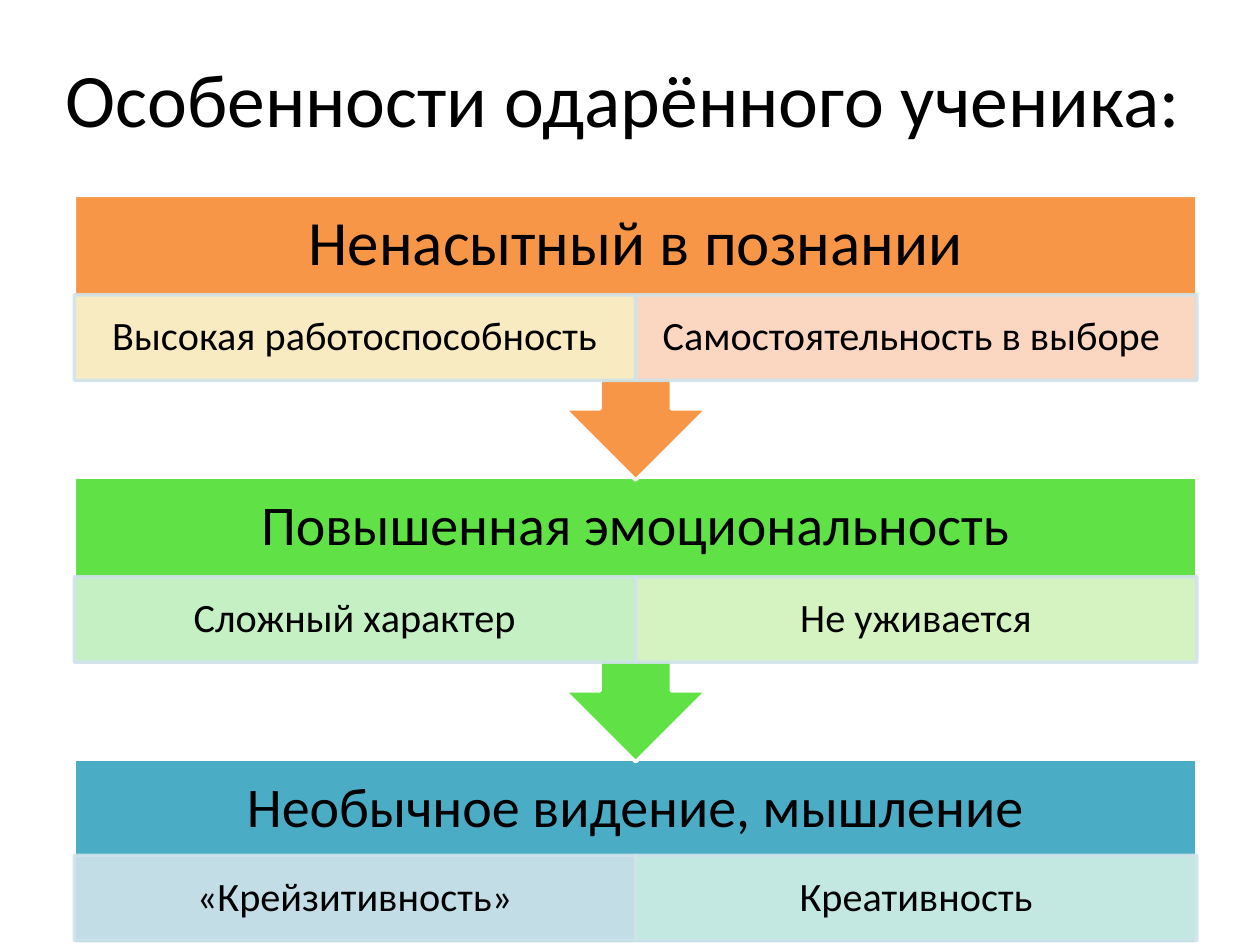
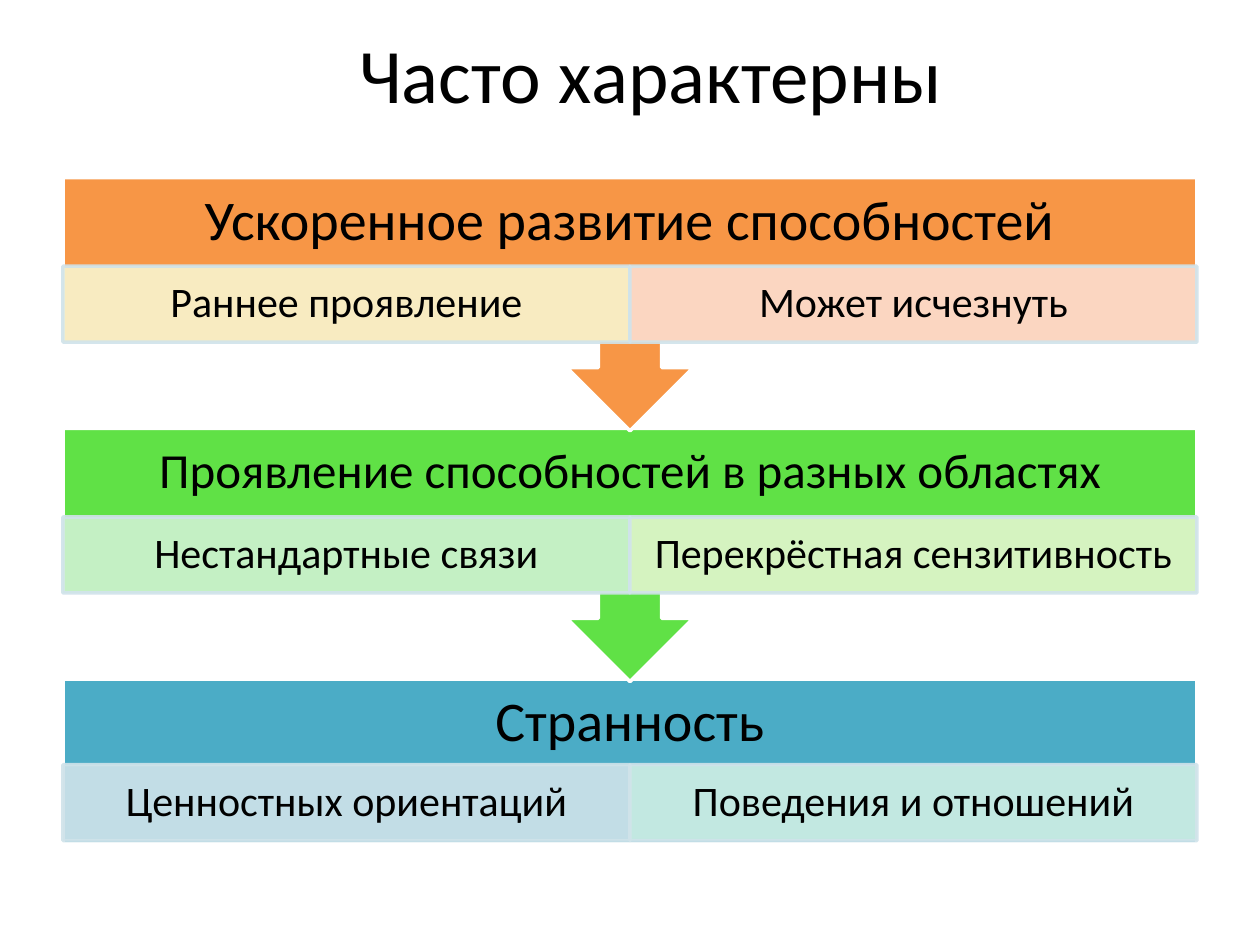
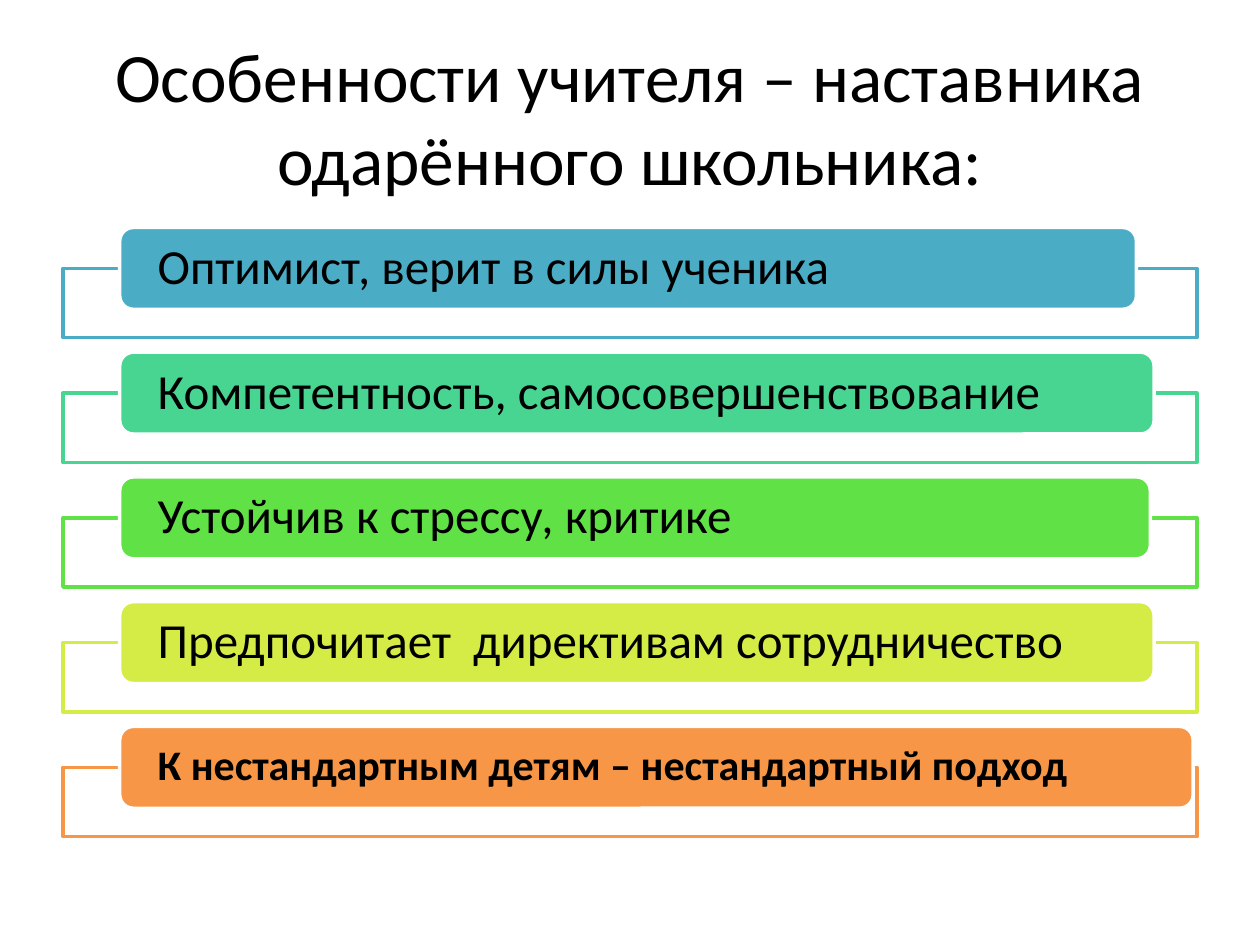
from typing import Any, NamedTuple

from lxml.etree import SubElement
from pptx import Presentation
from pptx.dml.color import RGBColor
from pptx.enum.shapes import MSO_SHAPE
from pptx.enum.text import MSO_ANCHOR, PP_ALIGN
from pptx.oxml.ns import qn
from pptx.util import Emu, Inches, Pt

WIDE, HIGH = Inches(10), Inches(7.5)
COLS, ROWS = 1000, 750

BLACK = RGBColor(0x00, 0x00, 0x00)
WHITE = RGBColor(0xFF, 0xFF, 0xFF)
ORANGE = RGBColor(0xF7, 0x96, 0x46)
GREEN = RGBColor(0x60, 0xE1, 0x46)
BLUE = RGBColor(0x4B, 0xAC, 0xC6)
MINT = RGBColor(0x48, 0xD4, 0x91)
LIME = RGBColor(0xD5, 0xEC, 0x46)
ICE = RGBColor(0xD0, 0xE3, 0xEA)
AQUA = RGBColor(0xCF, 0xEF, 0xE5)
LEAF = RGBColor(0xCF, 0xF2, 0xD2)
PEAR = RGBColor(0xE2, 0xF6, 0xCE)
CREAM = RGBColor(0xF9, 0xF5, 0xCF)
PEACH = RGBColor(0xFC, 0xDD, 0xCF)

FONT = {"name": "Calibri", "bold": False}
FRAME = {"word_wrap": True, "vertical_anchor": MSO_ANCHOR.MIDDLE}
TINTS = [(ORANGE, CREAM, PEACH), (GREEN, LEAF, PEAR), (BLUE, ICE, AQUA)]


class Box(NamedTuple):
    left: float
    top: float
    wide: float
    high: float

    def place(self) -> list[Emu]:
        x, y = WIDE / COLS, HIGH / ROWS
        return [Emu(round(n * s)) for n, s in zip(self, (x, y, x, y))]


class Tier(NamedTuple):
    head: str
    size: float
    cells: tuple[str, str]


class Stack(NamedTuple):
    title: str
    size: float
    spot: Box
    left: float
    top: float
    wide: float
    high: float
    small: float
    tiers: list[Tier]


class Bar(NamedTuple):
    text: str
    tint: RGBColor
    wide: float
    size: float = 28
    bold: bool = False


STACKS = [
    Stack("Особенности одарённого ученика:", 43.2, Box(39, 0, 911, 155),
          59, 155, 891, 226, 23, [
              Tier("Ненасытный в познании", 36,
                   ("Высокая работоспособность", "Самостоятельность в выборе ")),
              Tier("Повышенная эмоциональность", 32,
                   ("Сложный характер", "Не уживается")),
              Tier("Необычное видение, мышление", 32,
                   ("«Крейзитивность»", "Креативность")),
          ]),
    Stack("Часто характерны", 44, Box(83, 0, 867, 115),
          50, 141, 900, 201, 24, [
              Tier("Ускоренное развитие способностей", 32,
                   ("Раннее проявление", "Может исчезнуть")),
              Tier("Проявление способностей в разных областях", 28,
                   ("Нестандартные связи", "Перекрёстная сензитивность")),
              Tier("Странность", 32,
                   ("Ценностных ориентаций", "Поведения и отношений")),
          ]),
]

BARS = [
    Bar("Оптимист, верит в силы ученика", BLUE, 807),
    Bar("Компетентность, самосовершенствование", MINT, 821),
    Bar("Устойчив к стрессу, критике", GREEN, 818),
    Bar("Предпочитает  директивам сотрудничество", LIME, 821),
    Bar("К нестандартным детям – нестандартный подход", ORANGE, 852, 24, True),
]


def adorn(thing: Any, looks: dict[str, Any]) -> None:
    for key, val in looks.items():
        setattr(thing, key, val)


def write(shape: Any, text: str, size: float, side: float = 0.1,
          gap: float = 0.9, align: PP_ALIGN = PP_ALIGN.CENTER,
          bold: bool = False) -> None:
    frame = shape.text_frame
    adorn(frame, FRAME | {"margin_left": Inches(side), "margin_right": Inches(side),
                          "margin_top": Inches(0.03), "margin_bottom": Inches(0.03)})
    para = frame.paragraphs[0]
    adorn(para, {"text": text, "alignment": align, "line_spacing": gap})
    font = para.runs[0].font
    adorn(font, FONT | {"size": Pt(size), "bold": bold})
    font.color.rgb = BLACK


def label(slide: Any, box: Box, text: str, size: float, **looks: Any) -> None:
    write(slide.shapes.add_textbox(*box.place()), text, size, **looks)


def draw(slide: Any, kind: MSO_SHAPE, box: Box, fill: RGBColor,
         edge: RGBColor = WHITE) -> Any:
    shape = slide.shapes.add_shape(kind, *box.place())
    shape.shadow.inherit = False
    shape.fill.solid()
    shape.fill.fore_color.rgb = fill
    shape.line.color.rgb = edge
    shape.line.width = Pt(2)
    return shape


def fade(shape: Any) -> None:
    for tone in list(shape.element.iter(qn("a:srgbClr")))[:2]:
        SubElement(tone, qn("a:alpha"), val="90000")


def add_tier(slide: Any, stack: Stack, row: int) -> None:
    tier, (tint, *pales) = stack.tiers[row], TINTS[row]
    last = row == len(stack.tiers) - 1
    top = stack.top + row * 0.99 * stack.high
    full = Box(stack.left, top, stack.wide, stack.high * (0.65 if last else 1))
    kind = MSO_SHAPE.RECTANGLE if last else MSO_SHAPE.UP_ARROW_CALLOUT
    block = draw(slide, kind, full, tint)
    block.rotation = 0 if last else 180
    label(slide, full._replace(high=0.35 * stack.high), tier.head, tier.size)
    half = stack.wide / 2
    drop = full.high * (0.52 if last else 0.35)
    for col, (text, pale) in enumerate(zip(tier.cells, pales)):
        spot = Box(stack.left + col * half, top + drop, half, 0.3 * stack.high)
        cell = draw(slide, MSO_SHAPE.RECTANGLE, spot, pale, ICE)
        write(cell, text, stack.small, side=0.18)
        fade(cell)


def add_bar(slide: Any, bar: Bar, row: int) -> None:
    top = 213 + 99 * row
    draw(slide, MSO_SHAPE.RECTANGLE, Box(50, top, 900, 55), WHITE, bar.tint)
    pill = draw(slide, MSO_SHAPE.ROUNDED_RECTANGLE,
                Box(95, top - 32.5, bar.wide, 65), bar.tint)
    write(pill, bar.text, bar.size, side=0.27, align=PP_ALIGN.LEFT, bold=bar.bold)


def main() -> None:
    deck = Presentation()
    adorn(deck, {"slide_width": WIDE, "slide_height": HIGH})
    blank = deck.slide_layouts[6]
    for stack in STACKS:
        slide = deck.slides.add_slide(blank)
        label(slide, stack.spot, stack.title, stack.size, gap=1.0)
        for row in reversed(range(len(stack.tiers))):
            add_tier(slide, stack, row)
    slide = deck.slides.add_slide(blank)
    label(slide, Box(50, 30, 900, 125),
          "Особенности учителя – наставника одарённого школьника:", 39.6, gap=1.0)
    for row, bar in enumerate(BARS):
        add_bar(slide, bar, row)
    deck.save("out.pptx")


if __name__ == "__main__":
    main()
